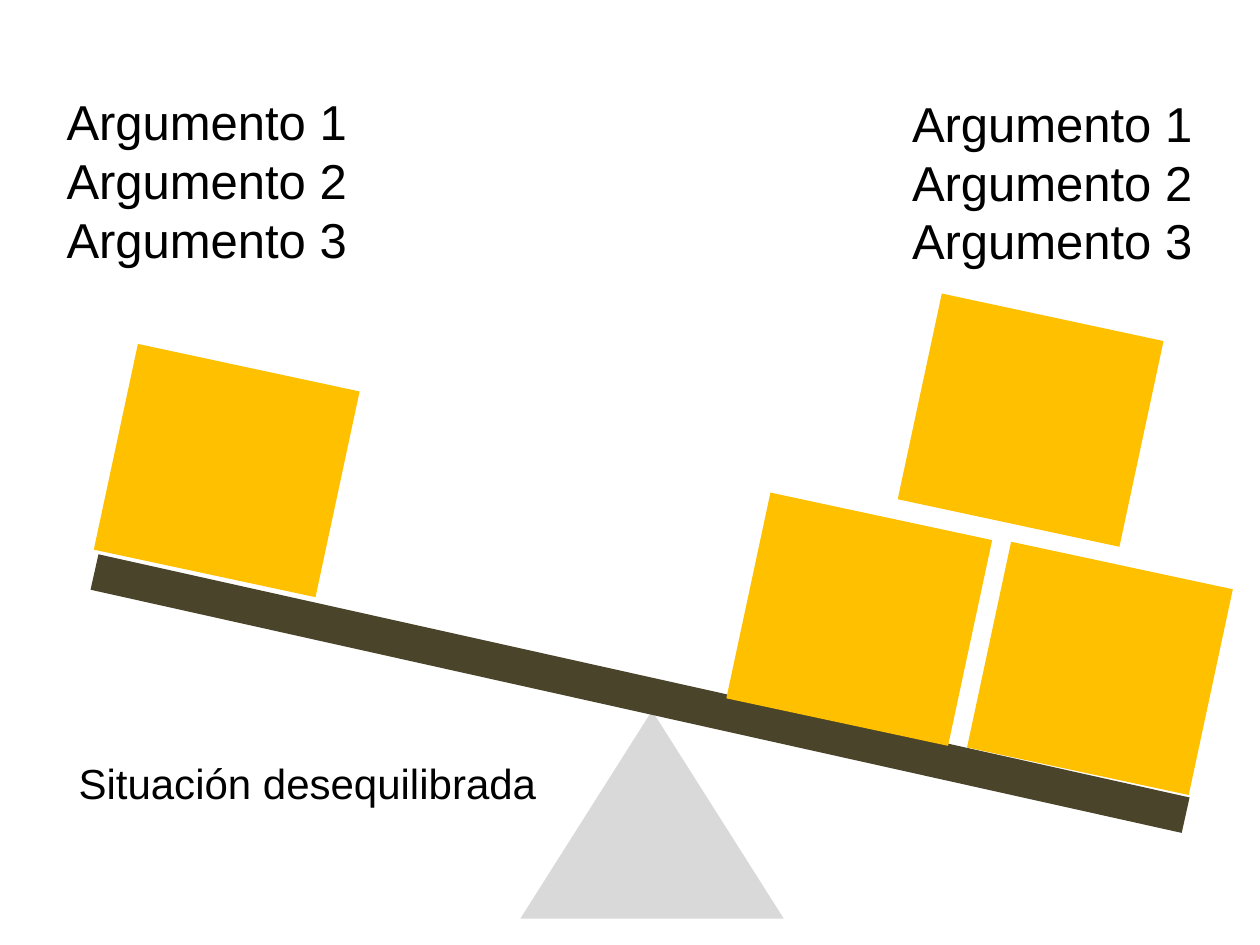
from pptx import Presentation
from pptx.dml.color import RGBColor
from pptx.enum.shapes import MSO_CONNECTOR, MSO_SHAPE
from pptx.enum.text import MSO_AUTO_SIZE, PP_ALIGN
from pptx.oxml.ns import qn
from pptx.util import Inches, Pt
from lxml import etree

RECT = MSO_SHAPE.RECTANGLE
TRIANGLE = MSO_SHAPE.ISOSCELES_TRIANGLE
STRAIGHT = MSO_CONNECTOR.STRAIGHT
FIT = MSO_AUTO_SIZE.SHAPE_TO_FIT_TEXT
LEFT, CENTER = PP_ALIGN.LEFT, PP_ALIGN.CENTER

TILT = 12.1
BOX_W, BOX_H = 1.8, 1.67
BOXES = [(0.9, 2.9), (7.83, 4.47), (5.92, 4.08), (7.28, 2.5)]
ARGUMENTS = ["Argumento 1", "Argumento 2", "Argumento 3"]


def rgb(color):
    return RGBColor.from_string(color)


def add_solid(s, kind, x, y, w, h, color, rotation=0):
    sp = s.shapes.add_shape(kind, Inches(x), Inches(y), Inches(w), Inches(h))
    sp.shadow.inherit = False
    sp.fill.solid()
    sp.fill.fore_color.rgb = rgb(color)
    sp.line.fill.background()
    sp.rotation = rotation


def add_beam(s, x1, y1, x2, y2, color, width):
    ln = s.shapes.add_connector(STRAIGHT, Inches(x1), Inches(y1), Inches(x2), Inches(y2))
    ln.line.color.rgb = rgb(color)
    ln.line.width = Pt(width)
    etree.SubElement(ln._element.spPr, qn("a:effectLst"))


def add_text(s, lines, x, y, w, h, size=28, color="000000", align=LEFT, wrap=False):
    tb = s.shapes.add_textbox(Inches(x), Inches(y), Inches(w), Inches(h))
    tf = tb.text_frame
    tf.word_wrap = wrap
    tf.auto_size = FIT
    for i, line in enumerate(lines):
        p = tf.add_paragraph() if i else tf.paragraphs[0]
        p.alignment = align
        r = p.add_run()
        r.text = line
        r.font.name = "Arial"
        r.font.size = Pt(size)
        r.font.color.rgb = rgb(color)


def main():
    prs = Presentation()
    prs.slide_width, prs.slide_height = Inches(10), Inches(7.5)
    s = prs.slides.add_slide(prs.slide_layouts[6])

    add_solid(s, TRIANGLE, 4.13, 5.64, 2.09, 1.65, "D9D9D9")
    add_beam(s, 0.75, 4.54, 9.41, 6.47, "4A452A", 20.75)
    for x, y in BOXES:
        add_solid(s, RECT, x, y, BOX_W, BOX_H, "FFC000", TILT)

    for x, y in [(0.43, 0.68), (7.14, 0.69)]:
        add_text(s, ARGUMENTS, x, y, 2.45, 1.51)
    add_text(s, ["Situación desequilibrada"], -0.51, 5.96, 5.9, 0.5,
             size=24, align=CENTER, wrap=True)

    prs.save("out.pptx")


if __name__ == "__main__":
    main()
